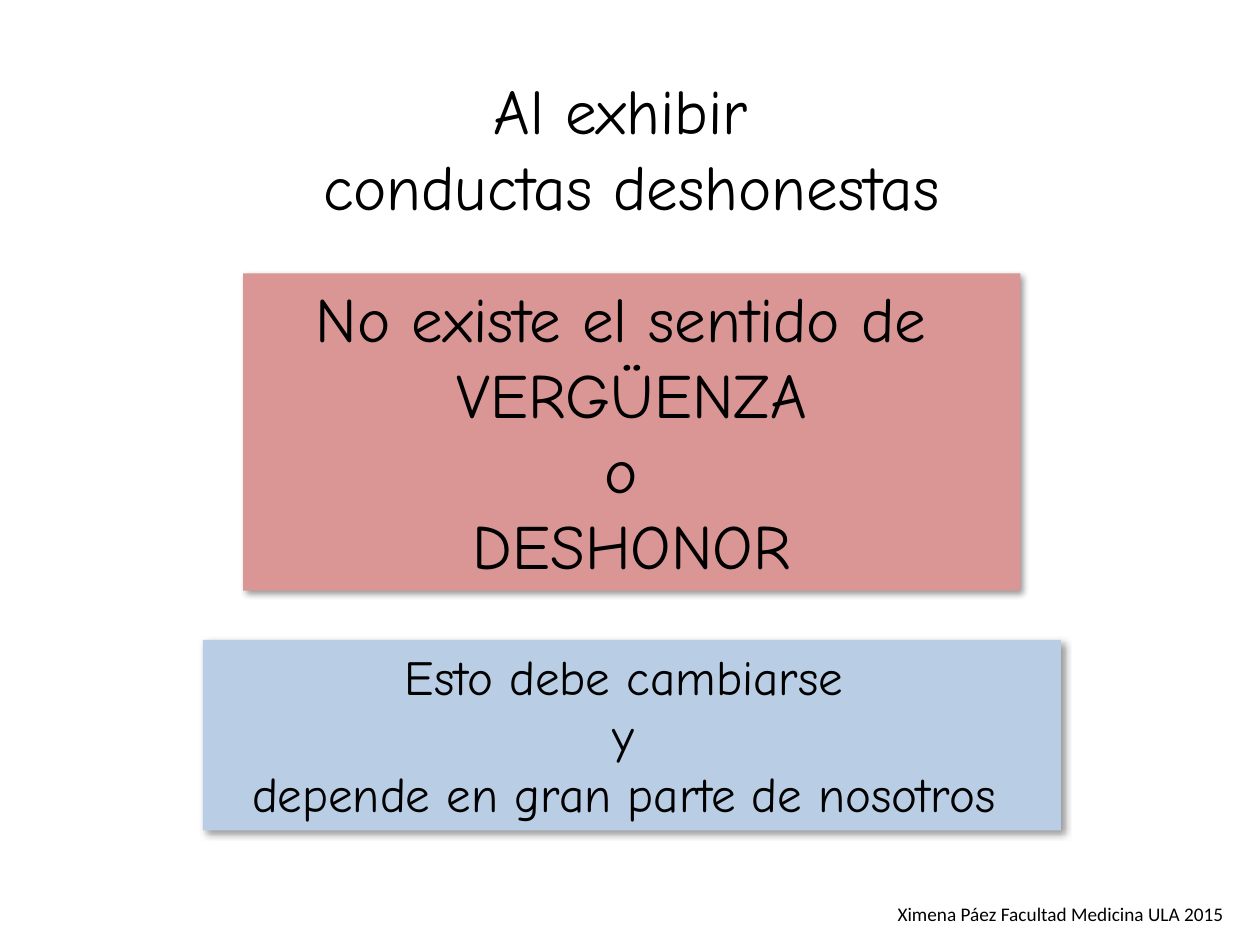
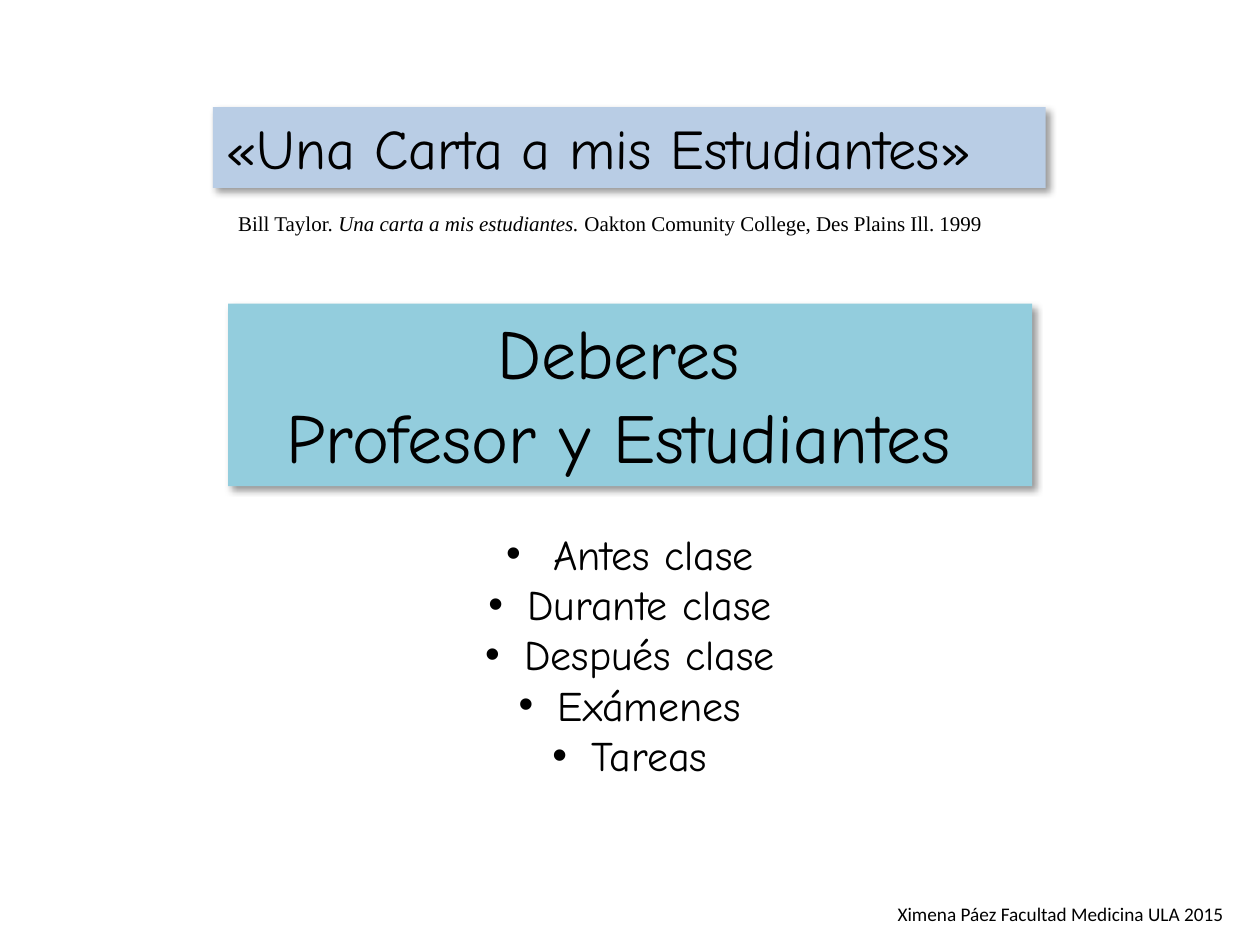
from lxml.etree import SubElement
from pptx import Presentation
from pptx.dml.color import RGBColor
from pptx.enum.shapes import MSO_SHAPE
from pptx.enum.text import MSO_ANCHOR, MSO_AUTO_SIZE, PP_ALIGN
from pptx.oxml.ns import qn
from pptx.util import Cm, Pt

BLACK = RGBColor(0x00, 0x00, 0x00)
ROSE = RGBColor(0xD9, 0x96, 0x94)
SKY = RGBColor(0xB9, 0xCD, 0xE5)
AQUA = RGBColor(0x93, 0xCD, 0xDD)

HAND_FONT = "Comic Neue"
FOOTER_BOX = (17.78, 18.06, 7.14, 0.74)
TITLE_ONLY = 5


def lengths(box):
    return [Cm(value) for value in box]


def format_text(frame, size, font=HAND_FONT, align=PP_ALIGN.CENTER, wrap=True):
    frame.auto_size = MSO_AUTO_SIZE.NONE
    frame.word_wrap = wrap
    frame.vertical_anchor = MSO_ANCHOR.TOP
    for paragraph in frame.paragraphs:
        paragraph.alignment = align
        for run in paragraph.runs:
            run.font.name = font
            run.font.size = Pt(size)
            run.font.color.rgb = BLACK


def fill_with_shadow(panel, color):
    """Give a borderless fill and a soft shadow to the lower right."""
    panel.fill.solid()
    panel.fill.fore_color.rgb = color
    panel.line.fill.background()
    panel.shadow.inherit = False
    effects = panel._element.spPr.find(qn("a:effectLst"))
    shadow = SubElement(effects, qn("a:outerShdw"), blurRad=str(Pt(4)), dist=str(Pt(3)),
                        dir="2700000", algn="tl", rotWithShape="0")
    shadow_color = SubElement(shadow, qn("a:srgbClr"), val=str(BLACK))
    SubElement(shadow_color, qn("a:alpha"), val="40000")


def place_title(slide, box, text, size, align=PP_ALIGN.CENTER):
    title = slide.shapes.title
    title.left, title.top, title.width, title.height = lengths(box)
    title.text_frame.text = text
    format_text(title.text_frame, size, align=align)
    return title


def add_panel(slide, box, text, size, color):
    panel = slide.shapes.add_shape(MSO_SHAPE.RECTANGLE, *lengths(box))
    fill_with_shadow(panel, color)
    panel.text_frame.text = text
    format_text(panel.text_frame, size)


def add_citation(slide, box, author, work, publisher):
    frame = slide.shapes.add_textbox(*lengths(box)).text_frame
    for part in (author, work, publisher):
        run = frame.paragraphs[0].add_run()
        run.text = part
        run.font.italic = part == work
    format_text(frame, 12, "Times New Roman", PP_ALIGN.LEFT)


def add_bullets(slide, box, indents_by_item):
    frame = slide.shapes.add_textbox(*lengths(box)).text_frame
    frame.text = "\n".join(indents_by_item)
    format_text(frame, 24)
    for paragraph, indent in zip(frame.paragraphs, indents_by_item.values()):
        properties = paragraph._p.get_or_add_pPr()
        properties.set("marL", str(Cm(indent)))
        properties.set("indent", str(-Cm(indent)))
        SubElement(properties, qn("a:buFont"), typeface="Arial")
        SubElement(properties, qn("a:buChar"), char="•")


def add_footer(slide):
    frame = slide.shapes.add_textbox(*lengths(FOOTER_BOX)).text_frame
    frame.text = "Ximena Páez Facultad Medicina ULA 2015"
    format_text(frame, 11, "Calibri", PP_ALIGN.RIGHT, wrap=False)


def build_dishonesty_slide(slide):
    place_title(slide, (5.51, 1.32, 14.43, 3.33), "Al exhibir \nconductas deshonestas", 36)
    add_panel(slide, (4.9, 5.51, 15.67, 6.4),
              "No existe el sentido de \nVERGÜENZA\no \nDESHONOR", 36, ROSE)
    add_panel(slide, (4.09, 12.9, 17.3, 3.84),
              "Esto debe cambiarse \ny \ndepende en gran parte de nosotros ", 28, SKY)
    add_footer(slide)


def build_letter_slide(slide):
    title = place_title(slide, (4.29, 2.16, 16.79, 1.63),
                        "«Una Carta a mis Estudiantes»", 32, PP_ALIGN.LEFT)
    fill_with_shadow(title, SKY)
    add_citation(slide, (4.55, 4.11, 16.31, 0.76), "Bill Taylor. ",
                 "Una carta a mis estudiantes. ",
                 "Oakton Comunity College, Des Plains Ill. 1999")
    add_panel(slide, (4.6, 6.12, 16.21, 3.68), "Deberes \nProfesor y Estudiantes ", 40, AQUA)
    add_bullets(slide, (9.27, 10.52, 6.86, 5.38),
                {"Antes clase": 0.95, "Durante clase": 0.79, "Después clase": 0.79,
                 "Exámenes": 0.79, "Tareas": 0.79})
    add_footer(slide)


def main():
    deck = Presentation()
    deck.slide_width, deck.slide_height = Cm(25.4), Cm(19.05)
    for build in (build_dishonesty_slide, build_letter_slide):
        build(deck.slides.add_slide(deck.slide_layouts[TITLE_ONLY]))
    deck.save("out.pptx")


if __name__ == "__main__":
    main()
